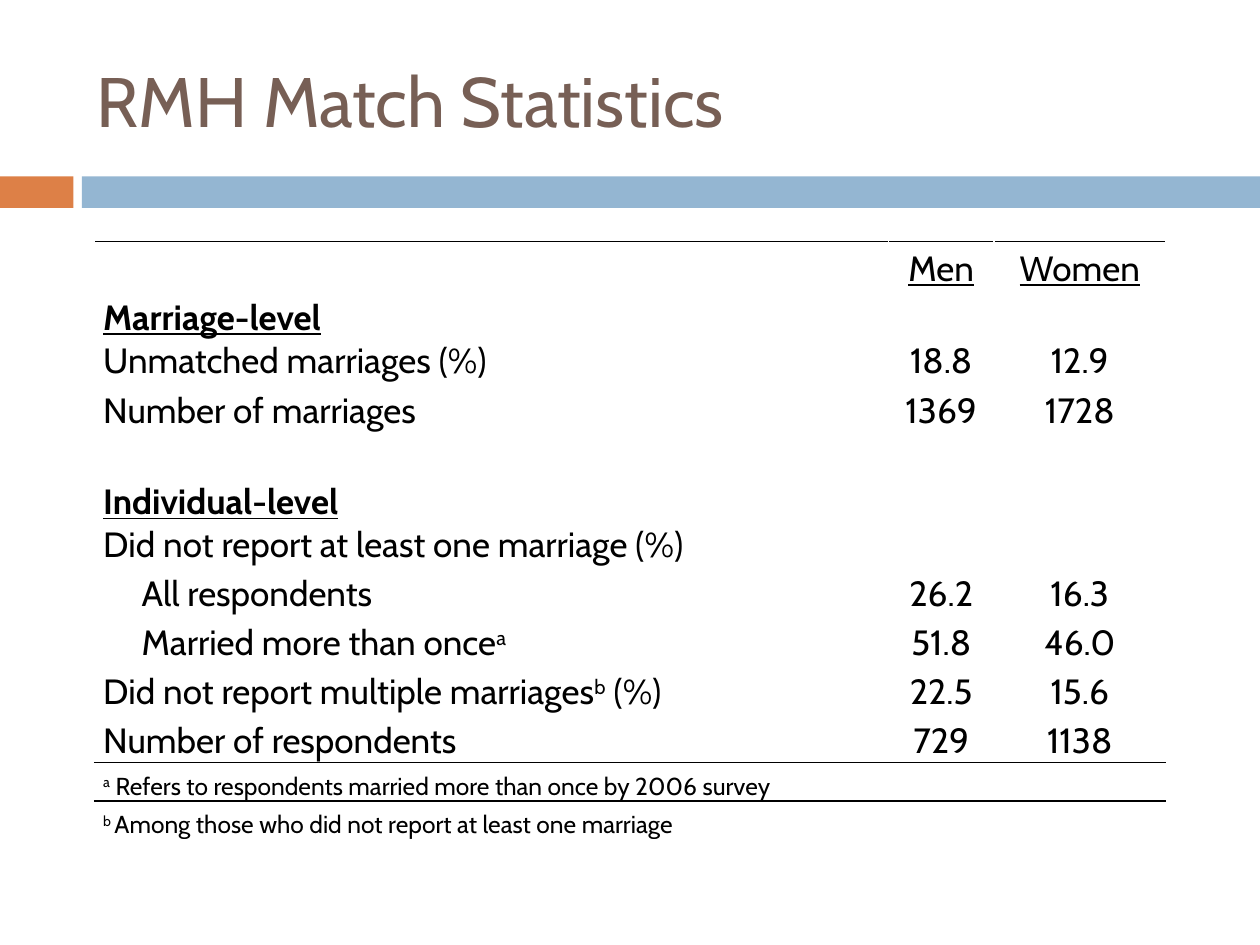
from pptx import Presentation
from pptx.dml.color import RGBColor
from pptx.enum.shapes import MSO_SHAPE as SHAPE
from pptx.enum.text import MSO_ANCHOR as ANCHOR, PP_ALIGN as ALIGN
from pptx.oxml import parse_xml
from pptx.oxml.ns import nsdecls
from pptx.util import Pt

COLORS = {"title": "775F55", "text": "000000", "accent": "DD8047", "band": "94B6D2"}
COLUMNS = [453.6, 60.5, 97.9]
INDENT = 22

# Kind, height, label and values; ^ switches superscript on and off
ROWS = [
    ("header", 27.4, "", "Men", "Women"),
    ("section", 27.4, "Marriage-level"),
    ("plain", 24, "Unmatched marriages (%)", "18.8", "12.9"),
    ("plain", 28.8, "Number of marriages", "1369", "1728"),
    ("plain", 24, ""),
    ("section", 27.4, "Individual-level"),
    ("plain", 24, "Did not report at least one marriage (%)"),
    ("indented", 27.4, "All respondents", "26.2", "16.3"),
    ("indented", 27.4, "Married more than once^a", "51.8", "46.0"),
    ("spaced", 27.4, "Did not report multiple marriages^b^ (%)", "22.5", "15.6"),
    ("spaced", 27.4, "Number of respondents", "729", "1138"),
    ("note", 22, "^a^ Refers to respondents married more than once by 2006 survey"),
    ("note", 22, "^b ^Among those who did not report at least one marriage"),
]
RULES = [(0, "T"), (10, "B"), (11, "T"), (11, "B"), (12, "T")]


class Deck:
    font = "Cabin"

    def __init__(self, prs):
        self.prs = prs
        self.slide = prs.slides.add_slide(prs.slide_layouts[5])

    def style(self, r, size, color, bold=False, underline=False):
        r.font.name, r.font.size = self.font, Pt(size)
        r.font.bold, r.font.underline = bold, underline
        r.font.color.rgb = RGBColor.from_string(COLORS[color])

    def title(self, text, x, y, w, h):
        sp = self.slide.shapes.title
        sp.left, sp.top, sp.width, sp.height = Pt(x), Pt(y), Pt(w), Pt(h)
        tf = sp.text_frame
        tf.text = text
        tf.vertical_anchor = ANCHOR.MIDDLE
        p = tf.paragraphs[0]
        p.alignment = ALIGN.LEFT
        self.style(p.runs[0], 40, "title")

    def bar(self, color, x, y, w, h):
        sp = self.slide.shapes.add_shape(SHAPE.RECTANGLE, Pt(x), Pt(y), Pt(w), Pt(h))
        sp.shadow.inherit = False
        sp.fill.solid()
        sp.fill.fore_color.rgb = RGBColor.from_string(COLORS[color])
        sp.line.fill.background()

    def rule(self, cell, side):
        line = parse_xml(
            f'<a:ln{side} {nsdecls("a")} w="{Pt(1)}"><a:solidFill>'
            f'<a:srgbClr val="{COLORS["text"]}"/></a:solidFill></a:ln{side}>')
        tcPr = cell._tc.get_or_add_tcPr()
        # Borders come before the fill, top before bottom
        tcPr.insert(len(tcPr) - 1, line)

    def cell(self, cell, text, kind, is_label):
        cell.margin_left = cell.margin_right = Pt(5)
        cell.margin_top = cell.margin_bottom = 0
        cell.vertical_anchor = ANCHOR.BOTTOM
        cell.fill.background()
        if is_label and kind == "indented":
            cell.margin_left = Pt(5 + INDENT)
        p = cell.text_frame.paragraphs[0]
        p.alignment = ALIGN.LEFT if is_label else ALIGN.CENTER
        loose = ("section", "note") if is_label else ("header", "indented", "spaced")
        if text and kind in loose:
            p.line_spacing = 1.15
        for i, part in enumerate(text.split("^")):
            if not part:
                continue
            r = p.add_run()
            r.text = part
            self.style(r, 14 if kind == "note" else 20, "text",
                       kind == "section", kind in ("header", "section"))
            if i % 2:
                r._r.get_or_add_rPr().set("baseline", "30000")

    def table(self, rows, x, y):
        frame = self.slide.shapes.add_table(
            len(rows), len(COLUMNS), Pt(x), Pt(y),
            Pt(sum(COLUMNS)), Pt(sum(row[1] for row in rows)))
        table = frame.table
        table.first_row = table.horz_banding = False
        for column, width in zip(table.columns, COLUMNS):
            column.width = Pt(width)
        for i, (kind, height, *texts) in enumerate(rows):
            table.rows[i].height = Pt(height)
            texts += [""] * (len(COLUMNS) - len(texts))
            for j, text in enumerate(texts):
                self.cell(table.cell(i, j), text, kind, j == 0)
            if kind == "note":
                table.cell(i, 0).merge(table.cell(i, len(COLUMNS) - 1))
        for i, side in RULES:
            for cell in table.rows[i].cells:
                self.rule(cell, side)


def main():
    prs = Presentation()
    prs.slide_width, prs.slide_height = Pt(720), Pt(540)
    deck = Deck(prs)

    # Title and the band below it
    deck.bar("accent", 0, 100.8, 42, 18)
    deck.bar("band", 46.8, 100.8, 673.2, 18)
    deck.title("RMH Match Statistics", 48, 18, 642, 78)

    # Match statistics by sex
    deck.table(ROWS, 54, 138)
    prs.save("out.pptx")


if __name__ == "__main__":
    main()
